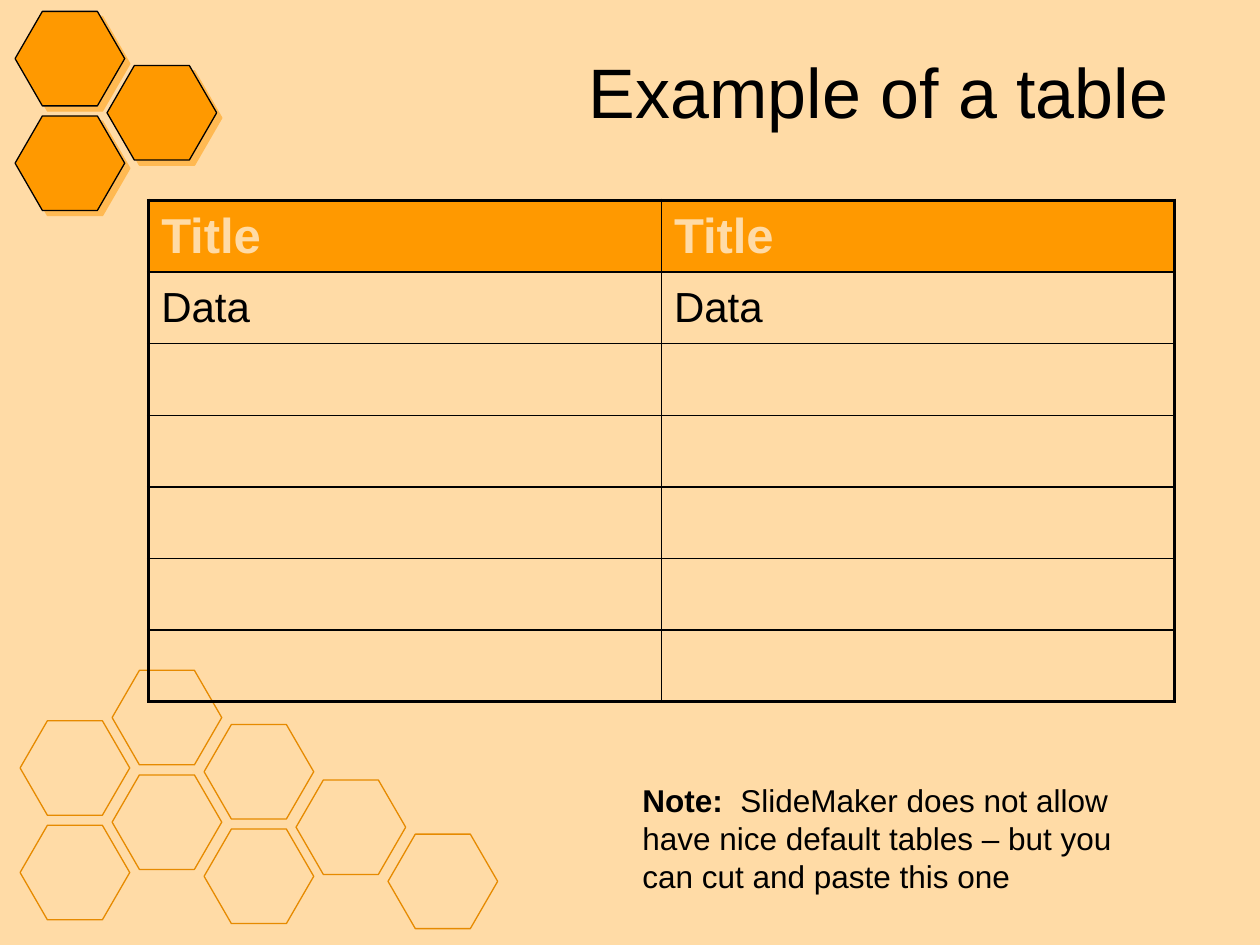
from lxml.etree import SubElement
from pptx import Presentation
from pptx.dml.color import RGBColor
from pptx.enum.shapes import MSO_SHAPE as Preset
from pptx.enum.text import MSO_ANCHOR as Anchor, PP_ALIGN as Align
from pptx.oxml.ns import qn
from pptx.util import Inches, Pt

CREAM = RGBColor(0xFF, 0xDB, 0xA6)
ORANGE = RGBColor(0xFF, 0x99, 0x00)
AMBER = RGBColor(0xE6, 0x8A, 0x00)
BLACK = RGBColor(0, 0, 0)

HEX_WIDTH, HEX_HEIGHT = 0.87, 0.75
COLUMN_STEP, ROW_STEP = 0.73, 0.83
THIN, THICK = 1, 2.25


def write(para, text, size=18, color=BLACK, bold=False, font="Arial"):
    span = para.add_run()
    span.text = text
    span.font.name = font
    span.font.size = Pt(size)
    span.font.bold = bold
    span.font.color.rgb = color


def add_border(cell, side, width):
    line = SubElement(cell._tc.get_or_add_tcPr(), qn(f"a:ln{side}"), w=str(Pt(width)))
    fill = SubElement(line, qn("a:solidFill"))
    SubElement(fill, qn("a:srgbClr"), val=str(BLACK))


class HoneycombSlide:
    """The honeycomb style and the page it is applied to."""

    def __init__(self, deck):
        self.page = deck.slides.add_slide(deck.slide_layouts[5])
        self.page.background.fill.solid()
        self.page.background.fill.fore_color.rgb = CREAM

    def hexagon(self, left, top, line, fill=None):
        shape = self.page.shapes.add_shape(
            Preset.HEXAGON, Inches(left), Inches(top), Inches(HEX_WIDTH), Inches(HEX_HEIGHT))
        shape.adjustments[0] = 0.289
        shape.adjustments[1] = 1.155
        shape.line.color.rgb = line
        shape.line.width = Pt(0.75)
        shape.shadow.inherit = False
        if fill is None:
            shape.fill.background()
            return
        shape.fill.solid()
        shape.fill.fore_color.rgb = fill
        effects = shape._element.spPr.find(qn("a:effectLst"))
        shadow = SubElement(effects, qn("a:outerShdw"), dist=str(Pt(4.2)),
                            dir="2700000", algn="ctr", rotWithShape="0")
        color = SubElement(shadow, qn("a:srgbClr"), val=str(fill))
        SubElement(color, qn("a:alpha"), val="50000")

    def honeycomb(self, left, columns, line, fill=None):
        """Each column is given as its top and its number of cells."""
        for column, (top, count) in enumerate(columns):
            for row in range(count):
                self.hexagon(left + column * COLUMN_STEP, top + row * ROW_STEP, line, fill)

    def title(self, text, left, top, width, height):
        box = self.page.shapes.title
        box.left, box.top = Inches(left), Inches(top)
        box.width, box.height = Inches(width), Inches(height)
        box.text_frame.vertical_anchor = Anchor.MIDDLE
        para = box.text_frame.paragraphs[0]
        para.alignment = Align.RIGHT
        write(para, text, size=40)

    def table(self, rows, left, top, width, height):
        row_count, column_count = len(rows), len(rows[0])
        table = self.page.shapes.add_table(
            row_count, column_count, Inches(left), Inches(top),
            Inches(width), Inches(height)).table
        table.first_row = table.horz_banding = False
        for r, row in enumerate(rows):
            for c, text in enumerate(row):
                cell = table.cell(r, c)
                cell.vertical_anchor = Anchor.MIDDLE
                # Thick outer frame, thin inner grid
                outer = {"L": c == 0, "R": c == column_count - 1,
                         "T": r == 0, "B": r == row_count - 1}
                for side, is_outer in outer.items():
                    add_border(cell, side, THICK if is_outer else THIN)
                header = r == 0
                if header:
                    cell.fill.solid()
                    cell.fill.fore_color.rgb = ORANGE
                else:
                    cell.fill.background()
                if text:
                    write(cell.text_frame.paragraphs[0], text, size=28 if header else 24,
                          color=CREAM if header else BLACK, bold=header)

    def note(self, label, text, left, top, width, height):
        box = self.page.shapes.add_textbox(
            Inches(left), Inches(top), Inches(width), Inches(height))
        box.text_frame.word_wrap = True
        para = box.text_frame.paragraphs[0]
        write(para, label, bold=True)
        write(para, text)


def main():
    deck = Presentation()
    deck.slide_width, deck.slide_height = Inches(10), Inches(7.5)
    slide = HoneycombSlide(deck)

    # Honeycomb decoration
    slide.honeycomb(0.16, [(5.72, 2), (5.32, 2), (5.75, 2), (6.19, 1), (6.62, 1)], AMBER)
    slide.honeycomb(0.12, [(0.09, 2), (0.52, 1)], BLACK, fill=ORANGE)

    # Content
    slide.title("Example of a table", 1.85, 0.28, 7.52, 0.87)
    rows = [("Title", "Title"), ("Data", "Data")] + [("", "")] * 5
    slide.table(rows, 1.18, 1.59, 8.14, 3.98)
    slide.note("Note:  ", "SlideMaker does not allow have nice default tables – "
               "but you can cut and paste this one", 5, 6.15, 4.21, 1)

    deck.save("out.pptx")


if __name__ == "__main__":
    main()
